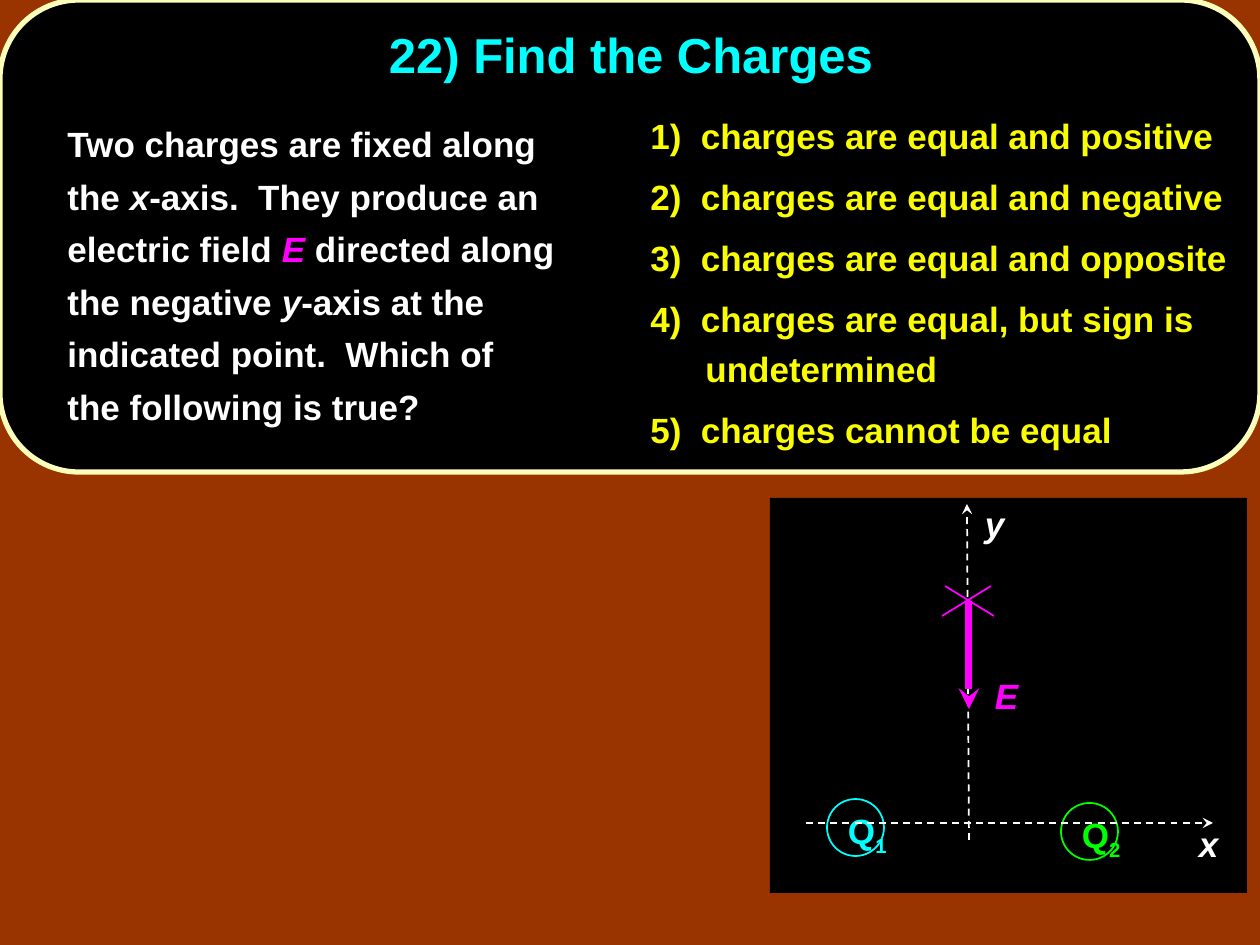
from lxml.etree import SubElement
from pptx import Presentation
from pptx.dml.color import RGBColor
from pptx.enum.dml import MSO_LINE
from pptx.enum.shapes import MSO_CONNECTOR, MSO_SHAPE
from pptx.enum.text import MSO_ANCHOR, MSO_AUTO_SIZE, PP_ALIGN
from pptx.oxml.ns import qn
from pptx.util import Emu, Pt

EMU_PER_PX = 914400 / 126
FONT = "Arial"
RUST = RGBColor(0x99, 0x33, 0x00)
BLACK = RGBColor(0x00, 0x00, 0x00)
CREAM = RGBColor(0xFC, 0xFE, 0xB9)
YELLOW = RGBColor(0xFA, 0xFD, 0x00)
WHITE = RGBColor(0xFF, 0xFF, 0xFF)
CYAN = RGBColor(0x00, 0xFF, 0xFF)
GREEN = RGBColor(0x00, 0xFF, 0x00)
MAGENTA = RGBColor(0xFF, 0x00, 0xFF)

HANG = 55  # depth of the hanging indent, in px

QUESTION = [
    ("Two charges are fixed along the ", WHITE, False),
    ("x", WHITE, True),
    ("-axis.  They produce an electric field ", WHITE, False),
    ("E", MAGENTA, True),
    (" directed along the negative ", WHITE, False),
    ("y", WHITE, True),
    ("-axis at the indicated point.  Which of  the following is true?", WHITE, False),
]
ANSWERS = [
    "charges are equal and positive",
    "charges are equal and negative",
    "charges are equal and opposite",
    "charges are equal, but sign is undetermined",
    "charges cannot be equal",
]


def px(length):
    return Emu(round(length * EMU_PER_PX))


def add_run(paragraph, text, color, size=20, italic=False):
    run = paragraph.add_run()
    run.text = text
    font = run.font
    font.name, font.size, font.bold, font.italic = FONT, Pt(size), True, italic
    font.color.rgb = color
    return run


def add_text_frame(slide, left, top, width, height):
    frame = slide.shapes.add_textbox(px(left), px(top), px(width), px(height)).text_frame
    frame.word_wrap = True
    return frame


def indent(paragraph, left, first):
    properties = paragraph._p.get_or_add_pPr()
    properties.set("marL", str(px(left)))
    properties.set("indent", str(px(first)))


def add_panel(slide, kind, left, top, width, height, fill=None, line=None, weight=1):
    panel = slide.shapes.add_shape(kind, px(left), px(top), px(width), px(height))
    panel.shadow.inherit = False
    if fill is None:
        panel.fill.background()
    else:
        panel.fill.solid()
        panel.fill.fore_color.rgb = fill
    if line is None:
        panel.line.fill.background()
    else:
        panel.line.color.rgb = line
        panel.line.width = Pt(weight)
    return panel


def add_line(slide, start, end, color, weight=1, dashed=False, arrow=False):
    connector = slide.shapes.add_connector(
        MSO_CONNECTOR.STRAIGHT, *(px(value) for value in (*start, *end)))
    connector.line.color.rgb = color
    connector.line.width = Pt(weight)
    if dashed:
        connector.line.dash_style = MSO_LINE.DASH
    if arrow:
        SubElement(connector.line._get_or_add_ln(), qn("a:tailEnd"), type="stealth")
    SubElement(connector._element.spPr, qn("a:effectLst"))


def add_label(slide, left, top, width, text, color, subscript=None):
    frame = add_text_frame(slide, left, top, width, 64)
    frame.word_wrap = False
    frame.auto_size = MSO_AUTO_SIZE.SHAPE_TO_FIT_TEXT
    frame.margin_left = frame.margin_right = px(25)
    frame.margin_top = frame.margin_bottom = px(13)
    paragraph = frame.paragraphs[0]
    paragraph.line_spacing = 0.9
    add_run(paragraph, text, color, italic=subscript is None)
    if subscript:
        lowered = add_run(paragraph, subscript, color)
        lowered.font._element.set("baseline", "-25000")


def add_question_panel(slide, left, top, width, height):
    frame_panel = add_panel(slide, MSO_SHAPE.ROUNDED_RECTANGLE, left, top, width, height,
                            BLACK, CREAM, 3)
    frame_panel.adjustments[0] = 0.167

    # Title
    title = add_text_frame(slide, left + 128, top, 1006, 116)
    title.vertical_anchor = MSO_ANCHOR.MIDDLE
    heading = title.paragraphs[0]
    heading.alignment = PP_ALIGN.CENTER
    heading.line_spacing = 0.9
    add_run(heading, "22) Find the Charges", CYAN, 28)

    # Question
    question = add_text_frame(slide, left, top + 106, 575, 328).paragraphs[0]
    question.line_spacing = 1.25
    indent(question, HANG, 0)
    for text, color, italic in QUESTION:
        add_run(question, text, color, italic=italic)

    # Answers
    answers = add_text_frame(slide, left + 638, top + 100, 622, 375)
    for number, answer in enumerate(ANSWERS, 1):
        paragraph = answers.paragraphs[0] if number == 1 else answers.add_paragraph()
        paragraph.line_spacing = 1.2
        if number > 1:
            paragraph.space_before = Pt(6)
        indent(paragraph, HANG, -HANG)
        add_run(paragraph, f"{number})  {answer}", YELLOW)


def add_charge(slide, left, top, subscript, color):
    add_panel(slide, MSO_SHAPE.OVAL, left, top, 57, 57, line=color)
    add_label(slide, left - 4, top - 2, 91, "Q", color, subscript)


def add_field_diagram(slide, left, top, width, height):
    def at(x, y):
        return left + x, top + y

    add_panel(slide, MSO_SHAPE.RECTANGLE, left, top, width, height, BLACK)

    # Charges
    add_charge(slide, *at(291, 305), "2", GREEN)
    add_charge(slide, *at(57, 301), "1", CYAN)

    # Axes
    add_line(slide, at(36, 325), at(443, 325), WHITE, dashed=True, arrow=True)
    add_label(slide, *at(404, 316), 71, "x", WHITE)
    add_line(slide, at(199, 342), at(197, 6), WHITE, dashed=True, arrow=True)
    add_label(slide, *at(190, -4), 71, "y", WHITE)

    # Field vector and the marked point
    add_line(slide, at(199, 103), at(199, 211), MAGENTA, 4, arrow=True)
    add_label(slide, *at(200, 168), 74, "E", MAGENTA)
    add_line(slide, at(221, 88), at(172, 118), MAGENTA)
    add_line(slide, at(175, 88), at(224, 118), MAGENTA)


def main():
    deck = Presentation()
    deck.slide_width, deck.slide_height = px(1260), px(945)
    slide = deck.slides.add_slide(deck.slide_layouts[6])
    slide.background.fill.solid()
    slide.background.fill.fore_color.rgb = RUST
    add_question_panel(slide, 0, 0, 1260, 472)
    add_field_diagram(slide, 770, 498, 477, 395)
    deck.save("out.pptx")


if __name__ == "__main__":
    main()
